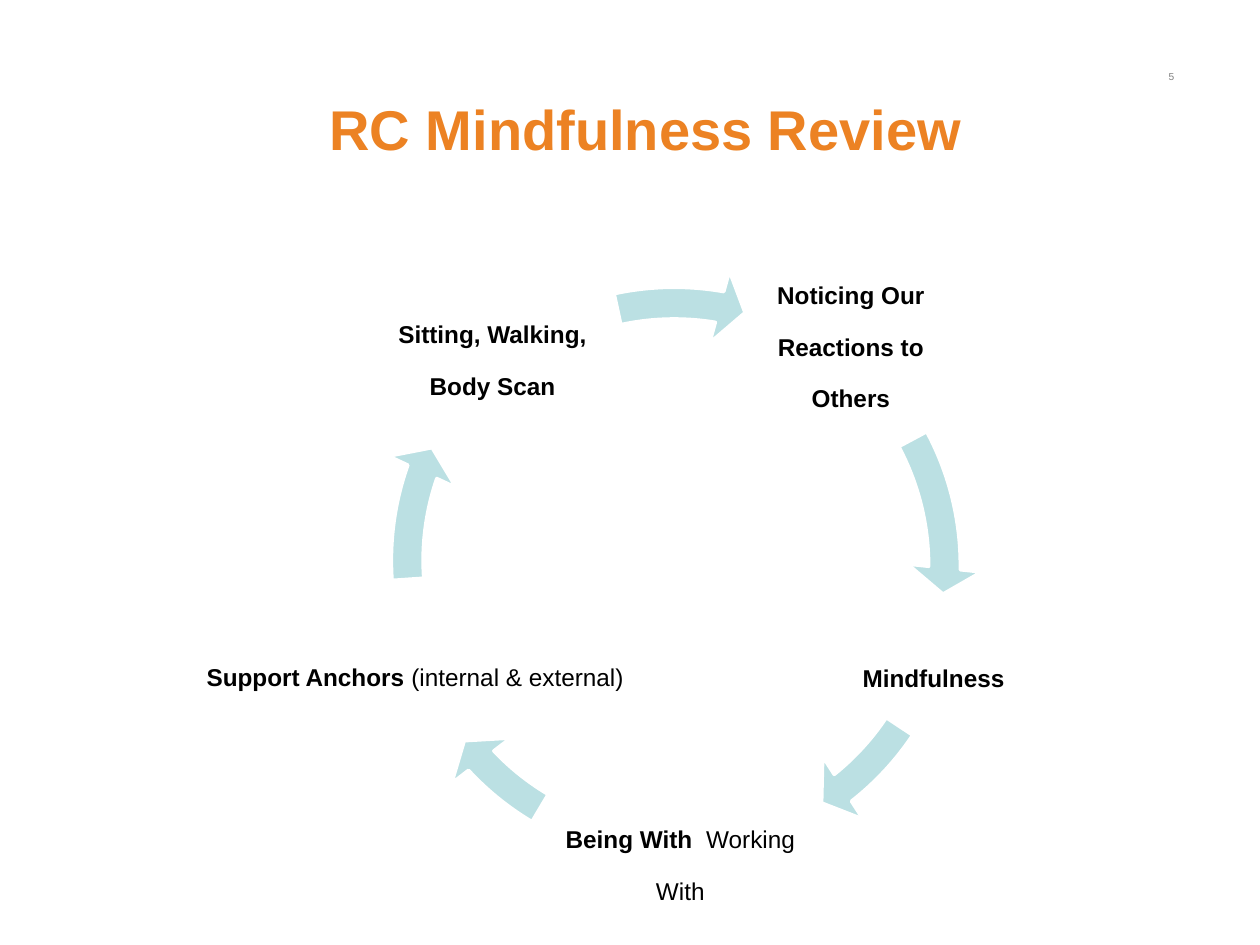
from pptx import Presentation
from pptx.dml.color import RGBColor as Rgb
from pptx.enum.shapes import MSO_SHAPE as Shape
from pptx.enum.text import MSO_ANCHOR as Anchor, PP_ALIGN as Align
from pptx.util import Pt

HUES = {"title": "EC8223", "arrow": "BBE0E3", "edge": "FFFFFF",
        "text": "000000", "page": "808080"}
SIDE = 348.5

# left, top, width, height, space kept free below, (words, bold) runs
STEPS = [
    (425.5, 165, 121.5, 85.5, 38, [("Noticing Our Reactions to Others", True)]),
    (458, 340, 151, 76, 0, [("Mindfulness", True)]),
    (307.5, 438.5, 162.5, 93, 0, [("Being With  ", True), ("Working With", False)]),
    (102, 331, 274.5, 93, 0,
     [("Support Anchors ", True), ("(internal & external) ", False)]),
    (211, 165, 141, 90.5, 28, [("Sitting, Walking, Body Scan", True)]),
]
# left, top, angle of the head, angle of the tail
ARROWS = [
    (212.5, 149, 0.31, 199.09),
    (212.5, 156, 30.99, 20.22),
    (212.5, 156, 82.16, 72.42),
    (211.5, 146, 119.59, 105.57),
    (211, 152, 167.86, 154.67),
]


class Deck:
    def __init__(self, wide, high):
        self.prs = Presentation()
        self.prs.slide_width, self.prs.slide_height = Pt(wide), Pt(high)
        self.slide = self.prs.slides.add_slide(self.prs.slide_layouts[6])
        self.face = "Arial"

    def text(self, box, runs, size, hue, align=Align.CENTER, low=False,
             frame=None, para=None):
        """Add a text box; low sets the runs as subscript."""
        tf = self.slide.shapes.add_textbox(*map(Pt, box)).text_frame
        p = tf.paragraphs[0]
        look = {"word_wrap": True, "vertical_anchor": Anchor.MIDDLE} | (frame or {})
        for item, form in ((tf, look), (p, {"alignment": align} | (para or {}))):
            for key, val in form.items():
                setattr(item, key, val)
        for words, bold in runs:
            run = p.add_run()
            run.text = words
            form = {"name": self.face, "size": Pt(size), "bold": bold}
            for key, val in form.items():
                setattr(run.font, key, val)
            run.font.color.rgb = Rgb.from_string(HUES[hue])
            if low:
                run._r.get_or_add_rPr().set("baseline", "-25000")

    def step(self, left, top, wide, high, free, runs):
        frame = {f"margin_{side}": Pt(2) for side in ("left", "right", "top")}
        frame["margin_bottom"] = Pt(2 + free)
        self.text((left, top, wide, high), runs, 24, "text", low=True,
                  frame=frame, para={"line_spacing": 0.9, "space_after": Pt(8.4)})

    def arrow(self, left, top, head, tail):
        arc = self.slide.shapes.add_shape(
            Shape.CIRCULAR_ARROW, *map(Pt, (left, top, SIDE, SIDE)))
        for i, val in enumerate((0.052, 3.354, head, tail, 0.061)):
            arc.adjustments[i] = val
        arc.shadow.inherit = False
        arc.fill.solid()
        arc.fill.fore_color.rgb = Rgb.from_string(HUES["arrow"])
        arc.line.color.rgb = Rgb.from_string(HUES["edge"])
        arc.line.width = Pt(2)


def main():
    deck = Deck(720, 540)
    deck.text((528, 30, 150, 24), [("5", False)], 10, "page", Align.RIGHT,
              low=True, frame={"vertical_anchor": Anchor.TOP})
    deck.text((18, 13, 702, 83), [("RC Mindfulness Review", True)], 32, "title",
              frame={"margin_top": Pt(41)})
    for step, arrow in zip(STEPS, ARROWS):
        deck.step(*step)
        deck.arrow(*arrow)
    deck.prs.save("out.pptx")


if __name__ == "__main__":
    main()
